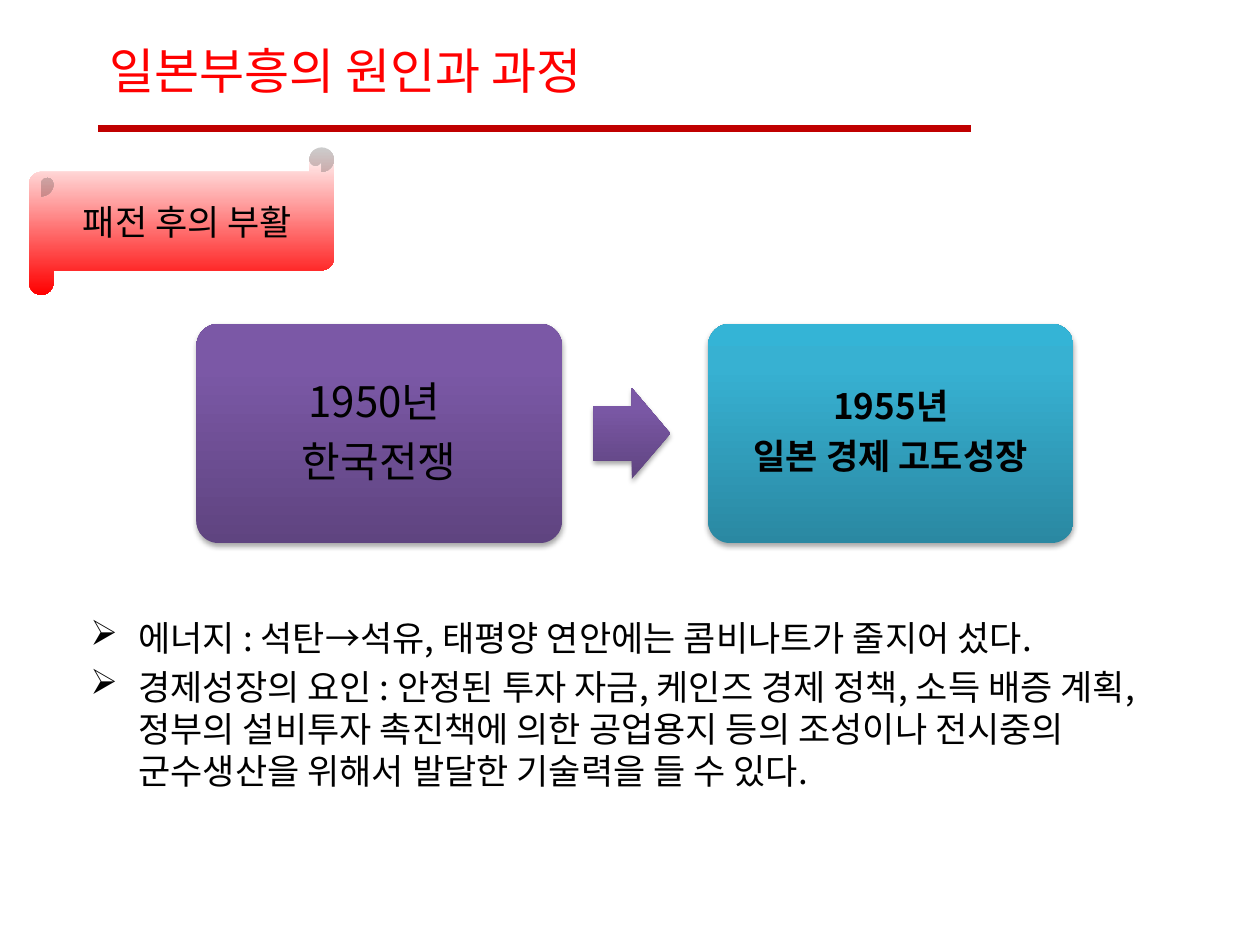
from lxml import etree
from pptx import Presentation
from pptx.dml.color import RGBColor
from pptx.enum.shapes import MSO_CONNECTOR, MSO_SHAPE
from pptx.enum.text import MSO_ANCHOR, PP_ALIGN
from pptx.oxml.ns import qn
from pptx.util import Inches, Pt

LINE = MSO_CONNECTOR.STRAIGHT
SCROLL = MSO_SHAPE.HORIZONTAL_SCROLL
ROUND_RECT = MSO_SHAPE.ROUNDED_RECTANGLE
ARROW = MSO_SHAPE.RIGHT_ARROW
TOP, MIDDLE = MSO_ANCHOR.TOP, MSO_ANCHOR.MIDDLE
LEFT, CENTER = PP_ALIGN.LEFT, PP_ALIGN.CENTER

FONT = "Noto Sans CJK KR"
BLACK = RGBColor(0x00, 0x00, 0x00)
WHITE = RGBColor(0xFF, 0xFF, 0xFF)
RED = RGBColor(0xFF, 0x00, 0x00)
DARK_RED = RGBColor(0xC0, 0x00, 0x00)
PURPLE = [
    (0, RGBColor(0x5F, 0x44, 0x80)),
    (80, RGBColor(0x7B, 0x58, 0xA6)),
    (100, RGBColor(0x7C, 0x57, 0xA8)),
]
TEAL = [
    (0, RGBColor(0x2A, 0x88, 0xA2)),
    (80, RGBColor(0x37, 0xB1, 0xD2)),
    (100, RGBColor(0x34, 0xB4, 0xD6)),
]


def add_xml(parent, tag, **attrs):
    el = etree.SubElement(parent, qn(tag))
    for name, value in attrs.items():
        el.set(name, str(value))
    return el


def write(tf, lines, size, color=BLACK, bold=False, align=CENTER,
          anchor=MIDDLE, bullet=None, spacing=None):
    tf.word_wrap = True
    tf.vertical_anchor = anchor
    for i, line in enumerate(lines):
        p = tf.paragraphs[0] if i == 0 else tf.add_paragraph()
        p.alignment = align
        for name, value in (spacing or {}).items():
            if i or name != "space_before":
                setattr(p, name, value)
        if bullet:
            pPr = p._p.get_or_add_pPr()
            pPr.set("marL", str(Inches(0.38)))
            pPr.set("indent", str(-Inches(0.38)))
            add_xml(pPr, "a:buChar", char=bullet)
        r = p.add_run()
        r.text = line
        r.font.color.rgb = color
        for name, value in {"size": Pt(size), "bold": bold, "name": FONT}.items():
            setattr(r.font, name, value)
        add_xml(r._r.get_or_add_rPr(), "a:ea", typeface=FONT)


def add_text(s, box, lines, size, **fmt):
    tf = s.shapes.add_textbox(*map(Inches, box)).text_frame
    write(tf, lines, size, **fmt)


def add_gradient_shape(s, kind, box, adjustments, stops, angle, shadow=True):
    sp = s.shapes.add_shape(kind, *map(Inches, box))
    for i, value in enumerate(adjustments):
        sp.adjustments[i] = value
    sp.shadow.inherit = False
    sp.line.fill.background()
    sp.fill.gradient()
    sp.fill.gradient_angle = angle
    spPr = sp._element.spPr
    gs_list = spPr.find(".//" + qn("a:gsLst"))
    for gs in list(gs_list):
        gs_list.remove(gs)
    for pos, color in stops:
        gs = add_xml(gs_list, "a:gs", pos=pos * 1000)
        add_xml(gs, "a:srgbClr", val=color)
    if shadow:
        outer = add_xml(spPr.find(qn("a:effectLst")), "a:outerShdw",
                        blurRad=Pt(3.1), dist=Pt(1.8), dir=5400000,
                        rotWithShape=0)
        add_xml(add_xml(outer, "a:srgbClr", val=BLACK), "a:alpha", val=35000)
    return sp


def add_header(s, left, top, width):
    add_text(s, (left, top, 4.38, 0.79), ["일본부흥의 원인과 과정"], 28, color=RED)
    y = Inches(top + 0.86)
    rule = s.shapes.add_connector(LINE, Inches(left + 0.23), y, Inches(left + width), y)
    rule.line.color.rgb = DARK_RED
    rule.line.width = Pt(4)
    add_xml(rule._element.spPr, "a:effectLst")


def add_banner(s, box):
    sp = add_gradient_shape(s, SCROLL, box, [0.166],
                            [(0, WHITE), (100, RED)], 270, shadow=False)
    write(sp.text_frame, ["패전 후의 부활"], 20)


def add_process(s, left, top, width, height):
    box_w, arrow_w, arrow_h = 2.9, 0.61, 0.72
    steps = [
        (left, PURPLE, ["1950년 ", "한국전쟁"], 24, False),
        (left + width - box_w, TEAL, ["1955년", "일본 경제 고도성장"], 20, True),
    ]
    for x, stops, lines, size, bold in steps:
        sp = add_gradient_shape(s, ROUND_RECT, (x, top, box_w, height), [0.1], stops, 90)
        spacing = {"line_spacing": 0.9, "space_after": Pt(size * 0.35)}
        write(sp.text_frame, lines, size, bold=bold, spacing=spacing)
    arrow_box = (left + box_w + 0.25, top + (height - arrow_h) / 2, arrow_w, arrow_h)
    add_gradient_shape(s, ARROW, arrow_box, [0.6, 0.5], PURPLE, 90)


def add_body(s, box):
    lines = [
        "에너지 : 석탄→석유, 태평양 연안에는 콤비나트가 줄지어 섰다.",
        "경제성장의 요인 : 안정된 투자 자금, 케인즈 경제 정책, 소득 배증 계획, "
        "정부의 설비투자 촉진책에 의한 공업용지 등의 조성이나 전시중의 "
        "군수생산을 위해서 발달한 기술력을 들 수 있다.",
    ]
    add_text(s, box, lines, 20, align=LEFT, anchor=TOP, bullet="➢",
             spacing={"space_before": Pt(4)})


def main():
    prs = Presentation()
    prs.slide_width, prs.slide_height = Inches(10), Inches(7.5)
    s = prs.slides.add_slide(prs.slide_layouts[6])
    add_header(s, 0.55, 0.16, 7.16)
    add_banner(s, (0.23, 1.17, 2.42, 1.17))
    add_process(s, 1.56, 2.57, 6.96, 1.74)
    add_body(s, (0.62, 4.84, 9, 2.17))
    prs.save("out.pptx")


if __name__ == "__main__":
    main()
